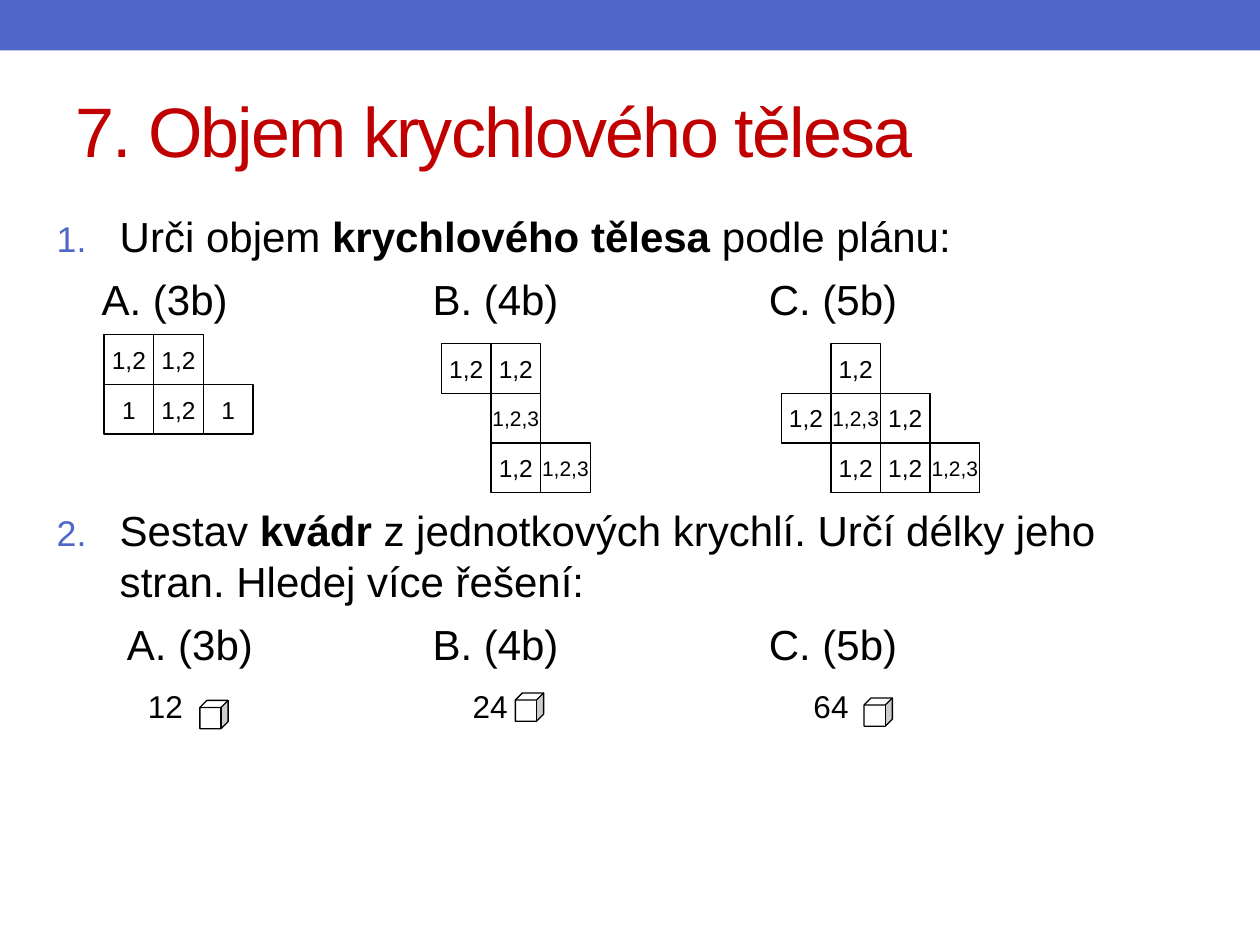
from dataclasses import dataclass

from lxml import etree
from pptx import Presentation
from pptx.dml.color import RGBColor
from pptx.enum.shapes import MSO_SHAPE
from pptx.enum.text import MSO_ANCHOR, MSO_AUTO_SIZE, PP_ALIGN
from pptx.oxml.ns import qn
from pptx.util import Cm, Pt

RECTANGLE, CUBE = MSO_SHAPE.RECTANGLE, MSO_SHAPE.CUBE
MIDDLE, TOP = MSO_ANCHOR.MIDDLE, MSO_ANCHOR.TOP
LEFT, CENTER = PP_ALIGN.LEFT, PP_ALIGN.CENTER
NO_AUTOFIT = MSO_AUTO_SIZE.NONE


@dataclass(frozen=True)
class Theme:
    """Colours, font and type sizes of the slide."""
    font: str = "Arial"
    accent: str = "4E67C8"
    title: str = "C00000"
    ink: str = "000000"
    paper: str = "FFFFFF"
    title_size: int = 40
    body_size: int = 24
    count_size: int = 18
    cell_size: int = 14
    small_cell_size: int = 12


THEME = Theme()
CELL = 1.0
CUBE_SIZE = 0.57
LINE_PITCH = 29
PLAN_GAP = 139

LABELS = ["A. (3b)", "B. (4b)", "C. (5b)"]
COUNTS = ["12", "24", "64"]
PLANS = [
    (2.1, 6.75, [["1,2", "1,2"], ["1", "1,2", "1"]]),
    (8.9, 6.93, [["1,2", "1,2"], ["", "1,2,3"], ["", "1,2", "1,2,3"]]),
    (15.75, 6.93, [["", "1,2"], ["1,2", "1,2,3", "1,2"],
                   ["", "1,2", "1,2", "1,2,3"]]),
]
CUBES = [(4.03, 14.12), (10.39, 13.97), (17.42, 14.07)]


def set_font(paragraph, size, color):
    """Set the font of a whole paragraph."""
    paragraph.font.name = THEME.font
    paragraph.font.size = Pt(size)
    paragraph.font.color.rgb = RGBColor.from_string(color)


def clear_margins(frame):
    """Remove the insets of a text frame."""
    frame.margin_left = frame.margin_right = 0
    frame.margin_top = frame.margin_bottom = 0


def place(shape, left, top, width, height):
    """Move and size a shape, in centimetres."""
    shape.left, shape.top = Cm(left), Cm(top)
    shape.width, shape.height = Cm(width), Cm(height)


def add_box(slide, kind, left, top, width, height, fill, line=None):
    """Add a flat preset shape, outlined if a line colour is given."""
    shape = slide.shapes.add_shape(kind, Cm(left), Cm(top), Cm(width), Cm(height))
    shape.shadow.inherit = False
    shape.fill.solid()
    shape.fill.fore_color.rgb = RGBColor.from_string(fill)
    if line:
        shape.line.color.rgb = RGBColor.from_string(line)
        shape.line.width = Pt(0.75)
    else:
        shape.line.fill.background()
    return shape


def add_plan(slide, left, top, rows):
    """Draw a plan of labelled unit squares; empty labels leave gaps."""
    for row, labels in enumerate(rows):
        for column, label in enumerate(labels):
            if not label:
                continue
            square = add_box(slide, RECTANGLE, left + column * CELL,
                             top + row * CELL, CELL, CELL, THEME.paper, THEME.ink)
            frame = square.text_frame
            clear_margins(frame)
            frame.vertical_anchor = MIDDLE
            frame.word_wrap = False
            paragraph = frame.paragraphs[0]
            paragraph.text = label
            paragraph.alignment = CENTER
            size = THEME.small_cell_size if len(label) > 3 else THEME.cell_size
            set_font(paragraph, size, THEME.ink)


def add_label_row(slide, labels, lefts, top, size):
    """Add one text box per label along a common top edge."""
    for label, left in zip(labels, lefts):
        box = slide.shapes.add_textbox(Cm(left), Cm(top), Cm(3), Cm(1))
        frame = box.text_frame
        clear_margins(frame)
        frame.word_wrap = True
        paragraph = frame.paragraphs[0]
        paragraph.text = label
        paragraph.alignment = LEFT
        set_font(paragraph, size, THEME.ink)


def write_task(paragraph, number, parts, before):
    """Write a numbered task from (text, bold) parts."""
    paragraph.alignment = LEFT
    paragraph.line_spacing = Pt(LINE_PITCH)
    paragraph.space_before = Pt(before)
    properties = paragraph._p.get_or_add_pPr()
    properties.set("marL", str(Cm(1.27)))
    properties.set("indent", str(Cm(-1.27)))
    color = etree.SubElement(properties, qn("a:buClr"))
    etree.SubElement(color, qn("a:srgbClr"), val=THEME.accent)
    etree.SubElement(properties, qn("a:buSzPct"), val="85000")
    etree.SubElement(properties, qn("a:buFont"), typeface=THEME.font)
    etree.SubElement(properties, qn("a:buAutoNum"), type="arabicPeriod",
                     startAt=str(number))
    set_font(paragraph, THEME.body_size, THEME.ink)
    for text, bold in parts:
        run = paragraph.add_run()
        run.text = text
        run.font.bold = bold


def write_title(title, text):
    """Fill and format the title placeholder."""
    place(title, 1.27, 1.49, 22.86, 2.24)
    frame = title.text_frame
    frame.auto_size = NO_AUTOFIT
    frame.vertical_anchor = MIDDLE
    paragraph = frame.paragraphs[0]
    paragraph.text = text
    paragraph.alignment = LEFT
    set_font(paragraph, THEME.title_size, THEME.title)
    paragraph.runs[0].font._element.set("spc", "-100")


def write_body(body):
    """Fill the body placeholder with both tasks."""
    place(body, 0.89, 4.11, 22.86, 11.61)
    frame = body.text_frame
    frame.auto_size = NO_AUTOFIT
    frame.vertical_anchor = TOP
    write_task(frame.paragraphs[0], 1, [
        ("Urči objem ", False), ("krychlového tělesa ", True),
        ("podle plánu:", False)], 4.6)
    write_task(frame.add_paragraph(), 2, [
        ("Sestav ", False), ("kvádr", True),
        (" z jednotkových krychlí. Určí délky jeho stran. "
         "Hledej více řešení:", False)], PLAN_GAP)


def main():
    """Build and save the slide."""
    presentation = Presentation()
    presentation.slide_width, presentation.slide_height = Cm(25.4), Cm(19.05)
    slide = presentation.slides.add_slide(presentation.slide_layouts[1])
    add_box(slide, RECTANGLE, 0, 0, 25.4, 1.02, THEME.accent)
    write_title(slide.shapes.title, "7. Objem krychlového tělesa")
    write_body(slide.placeholders[1])
    add_label_row(slide, LABELS, [2.05, 8.72, 15.5], 5.52, THEME.body_size)
    add_label_row(slide, LABELS, [2.56, 8.72, 15.5], 12.46, THEME.body_size)
    add_label_row(slide, COUNTS, [2.98, 9.53, 16.4], 13.84, THEME.count_size)
    for left, top, rows in PLANS:
        add_plan(slide, left, top, rows)
    for left, top in CUBES:
        add_box(slide, CUBE, left, top, CUBE_SIZE, CUBE_SIZE,
                THEME.paper, THEME.ink)
    presentation.save("out.pptx")


if __name__ == "__main__":
    main()
